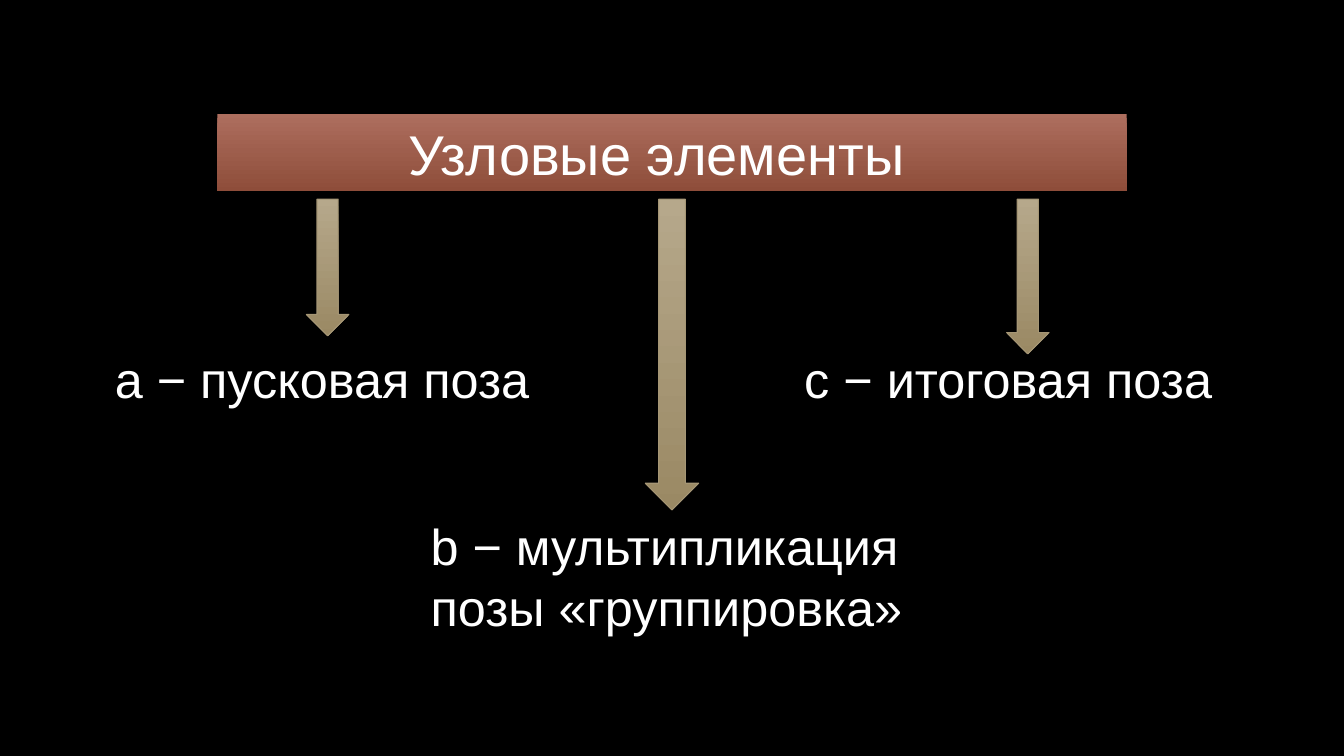
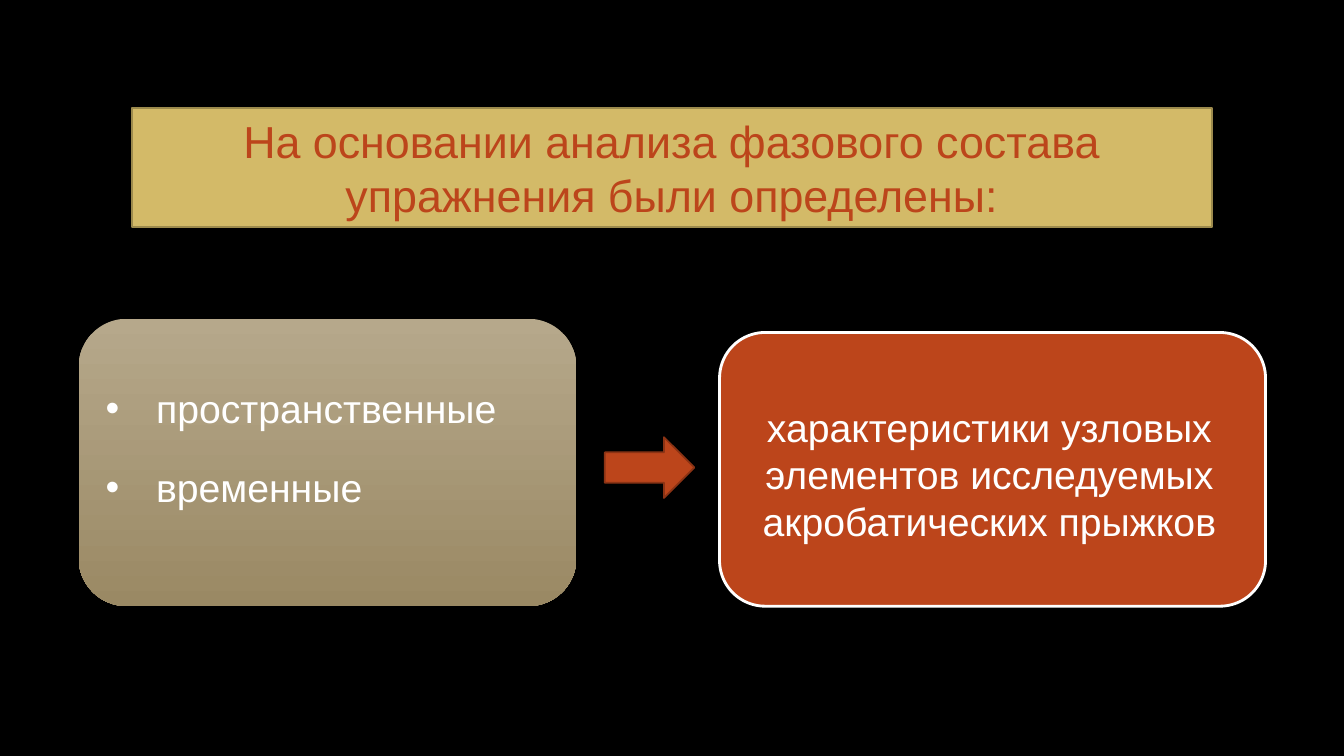
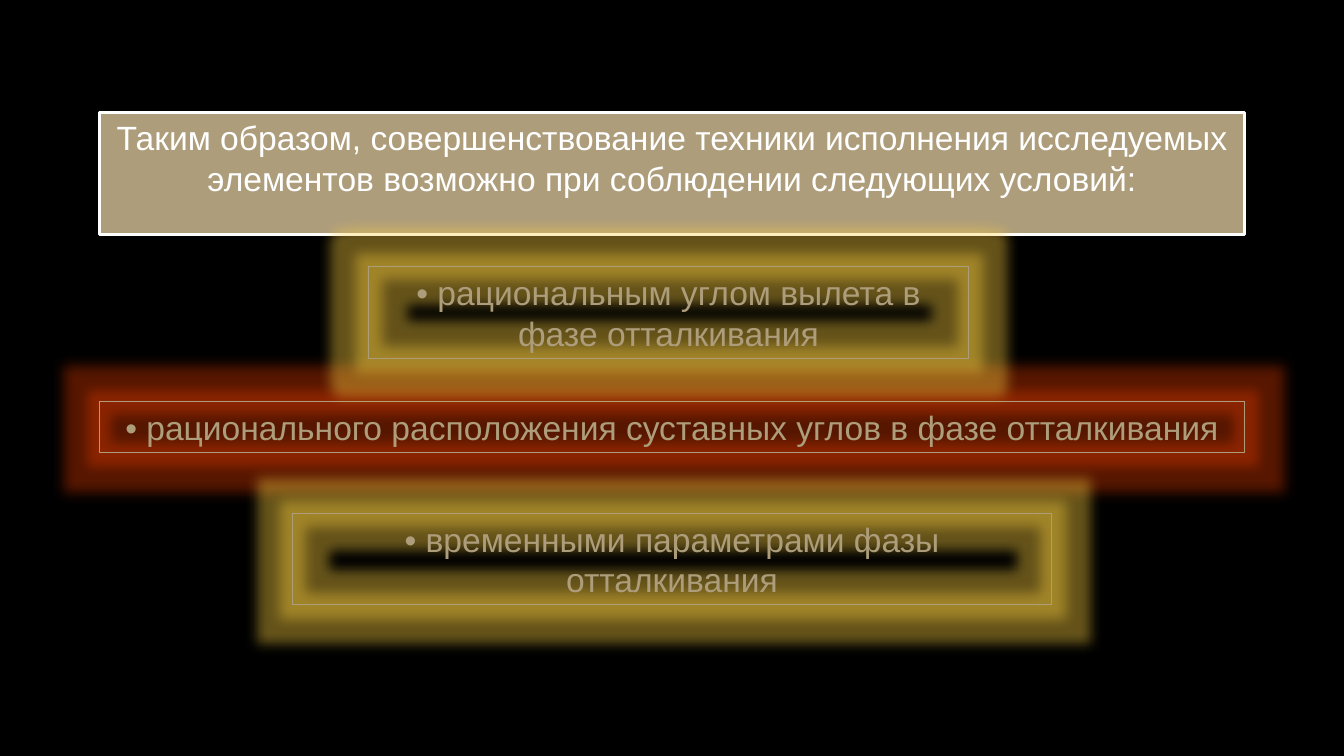
from lxml.etree import SubElement
from pptx import Presentation
from pptx.dml.color import RGBColor
from pptx.enum.shapes import MSO_SHAPE as SHAPE
from pptx.enum.text import MSO_ANCHOR as ANCHOR, PP_ALIGN as ALIGN
from pptx.oxml.ns import qn
from pptx.util import Pt

WHITE, RUST, GOLD, SAND = "FFFFFF", "BC451B", "D3BA68", "AD9D7B"
SAND_FADE = ("B6A88B", "9A8964")
BRICK_FADE = ("AD6E5E", "8E4D3A")


def color(hex_code):
    return RGBColor.from_string(hex_code)


def place(slide, at, text="", kind=None, fill=None, line=None, line_width=0.75,
          size=28, ink=WHITE, align=ALIGN.LEFT, anchor=ANCHOR.TOP,
          right_inset=7.2, bullet=False):
    left, top, width, height = [Pt(length) for length in at]
    if kind is None:
        item = slide.shapes.add_textbox(left, top, width, height)
    else:
        item = slide.shapes.add_shape(kind, left, top, width, height)
        item.shadow.inherit = False
        if isinstance(fill, tuple):
            item.fill.gradient()
            item.fill.gradient_angle = 270
            for stop, position, shade in zip(item.fill.gradient_stops, (0, 1), fill):
                stop.position = position
                stop.color.rgb = color(shade)
        elif fill:
            item.fill.solid()
            item.fill.fore_color.rgb = color(fill)
        else:
            item.fill.background()
        if line:
            item.line.color.rgb = color(line)
            item.line.width = Pt(line_width)
        else:
            item.line.fill.background()
    if text:
        frame = item.text_frame
        frame.word_wrap = True
        frame.vertical_anchor = anchor
        frame.margin_right = Pt(right_inset)
        paragraph = frame.paragraphs[0]
        paragraph.alignment = align
        run = paragraph.add_run()
        run.text = text
        run.font.name = "Arial"
        run.font.size = Pt(size)
        run.font.color.rgb = color(ink)
        if bullet:
            settings = paragraph._p.get_or_add_pPr()
            settings.set("marL", str(Pt(36)))
            settings.set("indent", str(-Pt(36)))
            SubElement(settings, qn("a:buFont")).set("typeface", "Arial")
            SubElement(settings, qn("a:buChar")).set("char", "•")
    return item


deck = Presentation()
deck.slide_width, deck.slide_height = Pt(960), Pt(540)
backdrop = deck.slide_master.background.fill
backdrop.solid()
backdrop.fore_color.rgb = color("000000")
elements, analysis, conditions = [
    deck.slides.add_slide(deck.slide_layouts[6]) for _ in range(3)]

place(elements, (155.3, 81.4, 649.4, 55.4), "Узловые элементы", kind=SHAPE.RECTANGLE,
      fill=BRICK_FADE, size=40, align=ALIGN.CENTER, anchor=ANCHOR.MIDDLE, right_inset=29.4)
for pose, at in [
    ("а − пусковая поза", (75, 245, 318, 51)),
    ("b − мультипликация позы «группировка»", (300.5, 364.5, 359, 94.5)),
    ("c − итоговая поза", (567.4, 245, 335, 51)),
]:
    place(elements, at, pose, size=36)
for center, width, height in [(234, 30.3, 97.5), (480, 38.2, 222), (734.2, 30.3, 110.5)]:
    place(elements, (center - width / 2, 142.3, width, height), kind=SHAPE.DOWN_ARROW,
          fill=SAND_FADE, line="A59675")

place(analysis, (514, 237.5, 390, 195.5), kind=SHAPE.ROUNDED_RECTANGLE,
      fill=RUST, line=WHITE, line_width=2)
place(analysis, (56.2, 227.7, 355.5, 205.2), kind=SHAPE.ROUNDED_RECTANGLE, fill=SAND_FADE)
place(analysis, (520.6, 284.5, 372.2, 108.7),
      "характеристики узловых элементов исследуемых акробатических прыжков",
      align=ALIGN.CENTER)
place(analysis, (94.4, 77, 771.2, 85),
      "На основании анализа фазового состава упражнения были определены:",
      kind=SHAPE.RECTANGLE, fill=GOLD, line="9C8A4D", line_width=1.25, size=32, ink=RUST,
      align=ALIGN.CENTER, anchor=ANCHOR.MIDDLE)
for row, trait in enumerate(["пространственные", "временные"]):
    place(analysis, (68.4, 271.2 + 56.4 * row, 480, 41), trait, bullet=True)
place(analysis, (432, 312.3, 64, 43.4), kind=SHAPE.RIGHT_ARROW,
      fill=RUST, line="8B3314", line_width=1.25)

place(conditions, (71, 80.2, 818, 87.2),
      "Таким образом, совершенствование техники исполнения исследуемых элементов "
      "возможно при соблюдении следующих условий:",
      kind=SHAPE.RECTANGLE, fill=SAND, line=WHITE, line_width=2, size=24, align=ALIGN.CENTER)
for condition, at, halo in [
    ("• рационального расположения суставных углов в фазе отталкивания",
     (71, 287, 818, 36.3), "D73800"),
    ("• рациональным углом вылета в фазе отталкивания",
     (263.2, 190.5, 428.6, 65.4), "FBCF40"),
    ("• временными параметрами фазы отталкивания",
     (208.8, 366.7, 542.4, 65.4), "FBCF40"),
]:
    frame = place(conditions, at, condition, kind=SHAPE.RECTANGLE, line=SAND, size=24,
                  ink=SAND, align=ALIGN.CENTER, anchor=ANCHOR.MIDDLE)
    glow = SubElement(frame._element.spPr.find(qn("a:effectLst")), qn("a:glow"))
    glow.set("rad", str(Pt(18)))
    tint = SubElement(glow, qn("a:srgbClr"))
    tint.set("val", halo)
    SubElement(tint, qn("a:alpha")).set("val", "40000")

deck.save("out.pptx")
